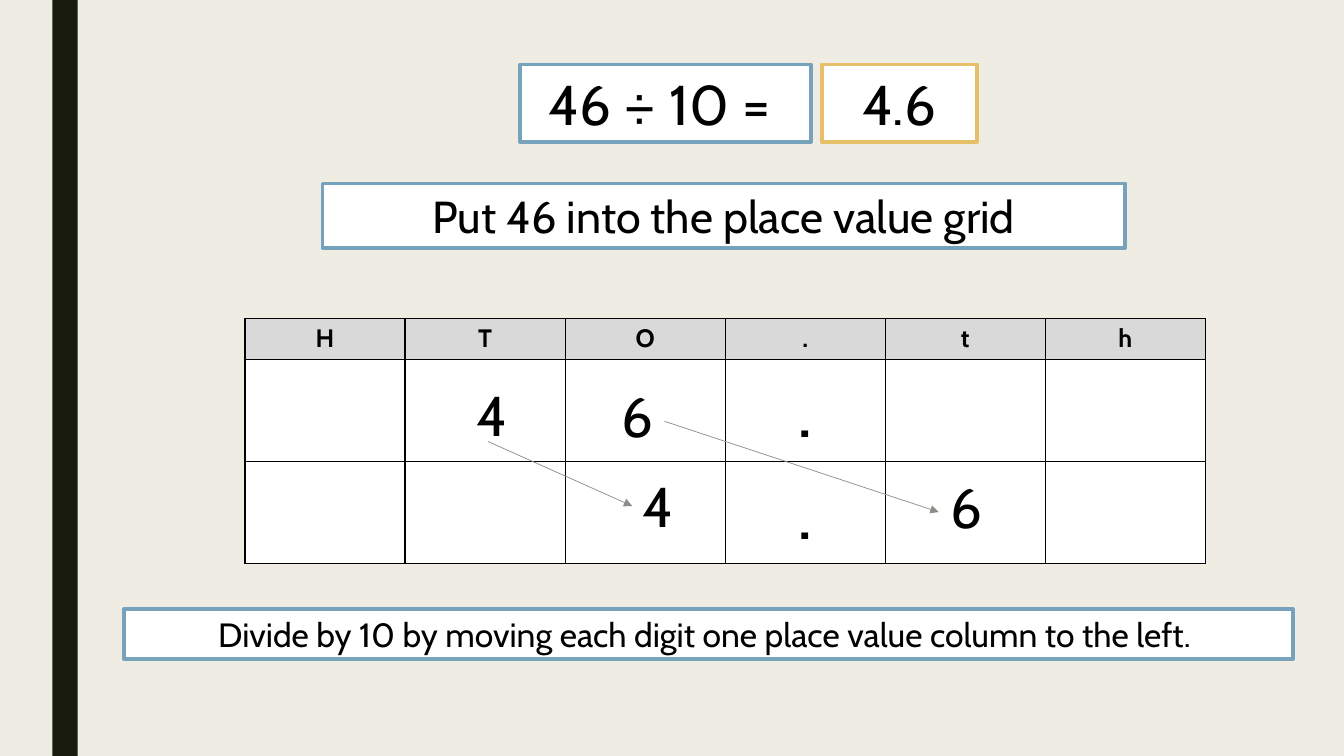
from lxml import etree
from pptx import Presentation
from pptx import util as u
from pptx.dml.color import RGBColor
from pptx.enum import shapes, text
from pptx.oxml import ns

WIDTH, HEIGHT = u.Inches(13.33), u.Inches(7.5)
FONT = "Cabin"
COLOURS = {
    "page": "EFEDE3", "band": "191B0E", "blue": "77A2BB", "gold": "E6C069",
    "header": "D9D9D9", "white": "FFFFFF", "black": "000000", "arrow": "8C8D86",
}
HEADINGS = ["H", "T", "O", ".", "t", "h"]
ROW_HEIGHTS = [5.33, 13.5, 13.5]
COLUMN_WIDTH = 11.91
POINT_COLUMN = HEADINGS.index(".")


def across(percent):
    return round(WIDTH * percent / 100)


def down(percent):
    return round(HEIGHT * percent / 100)


def place(left, top, width, height):
    return across(left), down(top), across(width), down(height)


def colour(name):
    return RGBColor.from_string(COLOURS[name])


def paint(target, name):
    target.fill.solid()
    target.fill.fore_color.rgb = colour(name)


def write(frame, words, size, align=text.PP_ALIGN.CENTER, bold=False):
    para = frame.paragraphs[0]
    para.alignment = align
    span = para.add_run()
    span.text = words
    span.font.name = FONT
    span.font.size = u.Pt(size)
    span.font.bold = bold
    span.font.color.rgb = colour("black")


def add_band(page):
    band = page.shapes.add_shape(shapes.MSO_SHAPE.RECTANGLE, *place(3.9, 0, 1.88, 100))
    band.shadow.inherit = False
    paint(band, "band")
    band.line.fill.background()


def add_panel(page, area, words, size, border="blue"):
    box = page.shapes.add_shape(shapes.MSO_SHAPE.RECTANGLE, *place(*area))
    box.shadow.inherit = False
    paint(box, "white")
    box.line.color.rgb = colour(border)
    box.line.width = u.Pt(2.75)
    frame = box.text_frame
    frame.word_wrap = True
    frame.vertical_anchor = text.MSO_ANCHOR.TOP
    write(frame, words, size)


def add_digit(page, digit, left, top):
    box = page.shapes.add_textbox(*place(left, top, 3.98, 10.27))
    box.text_frame.word_wrap = True
    write(box.text_frame, digit, 40, text.PP_ALIGN.LEFT)


def add_arrow(page, start, end):
    arrow = page.shapes.add_connector(
        shapes.MSO_CONNECTOR.STRAIGHT,
        across(start[0]), down(start[1]), across(end[0]), down(end[1]))
    arrow.line.color.rgb = colour("arrow")
    arrow.line.width = u.Pt(0.5)
    line = arrow.line._get_or_add_ln()
    etree.SubElement(line, ns.qn("a:tailEnd"), type="triangle")
    etree.SubElement(arrow._element.spPr, ns.qn("a:effectLst"))


def add_borders(cell):
    properties = cell._tc.get_or_add_tcPr()
    for index, side in enumerate(["lnL", "lnR", "lnT", "lnB"]):
        line = etree.Element(ns.qn("a:" + side), w=str(u.Pt(1)))
        fill = etree.SubElement(line, ns.qn("a:solidFill"))
        etree.SubElement(fill, ns.qn("a:srgbClr"), val=COLOURS["black"])
        properties.insert(index, line)


def add_place_value_grid(page):
    rows, columns = len(ROW_HEIGHTS), len(HEADINGS)
    area = place(18.23, 42.13, COLUMN_WIDTH * columns, sum(ROW_HEIGHTS))
    table = page.shapes.add_table(rows, columns, *area).table
    table.first_row = False
    table.horz_banding = False
    for column in table.columns:
        column.width = across(COLUMN_WIDTH)
    for r, height in enumerate(ROW_HEIGHTS):
        table.rows[r].height = down(height)
        for c, heading in enumerate(HEADINGS):
            cell = table.cell(r, c)
            paint(cell, "white" if r else "header")
            add_borders(cell)
            if r == 0:
                write(cell.text_frame, heading, 18, bold=True)
            elif c == POINT_COLUMN:
                cell.vertical_anchor = text.MSO_ANCHOR.MIDDLE
                write(cell.text_frame, heading, 54)


def main():
    deck = Presentation()
    deck.slide_width, deck.slide_height = WIDTH, HEIGHT
    page = deck.slides.add_slide(deck.slide_layouts[6])
    paint(page.background, "page")
    add_band(page)

    # Place value grid
    add_place_value_grid(page)

    # Calculation, instruction and rule
    add_panel(page, (38.71, 8.53, 21.61, 10.27), "46 ÷ 10 = ", 40)
    add_panel(page, (61.14, 8.53, 11.55, 10.27), "4.6", 40, "gold")
    add_panel(page, (24, 24.27, 59.72, 8.53), "Put 46 into the place value grid", 32)
    add_panel(page, (9.23, 80.53, 86.95, 6.67),
              "Divide by 10 by moving each digit one place value column to the left. ", 24)

    # Digits before and after the move
    for digit, left, top in [("4", 34.73, 49.73), ("6", 45.54, 49.87),
                             ("4", 47.04, 61.73), ("6", 69.99, 61.87)]:
        add_digit(page, digit, left, top)

    # Arrows that carry each digit to its new column
    add_arrow(page, (36.31, 58.4), (47.04, 66.93))
    add_arrow(page, (49.44, 55.73), (69.84, 67.73))

    deck.save("out.pptx")


if __name__ == "__main__":
    main()
